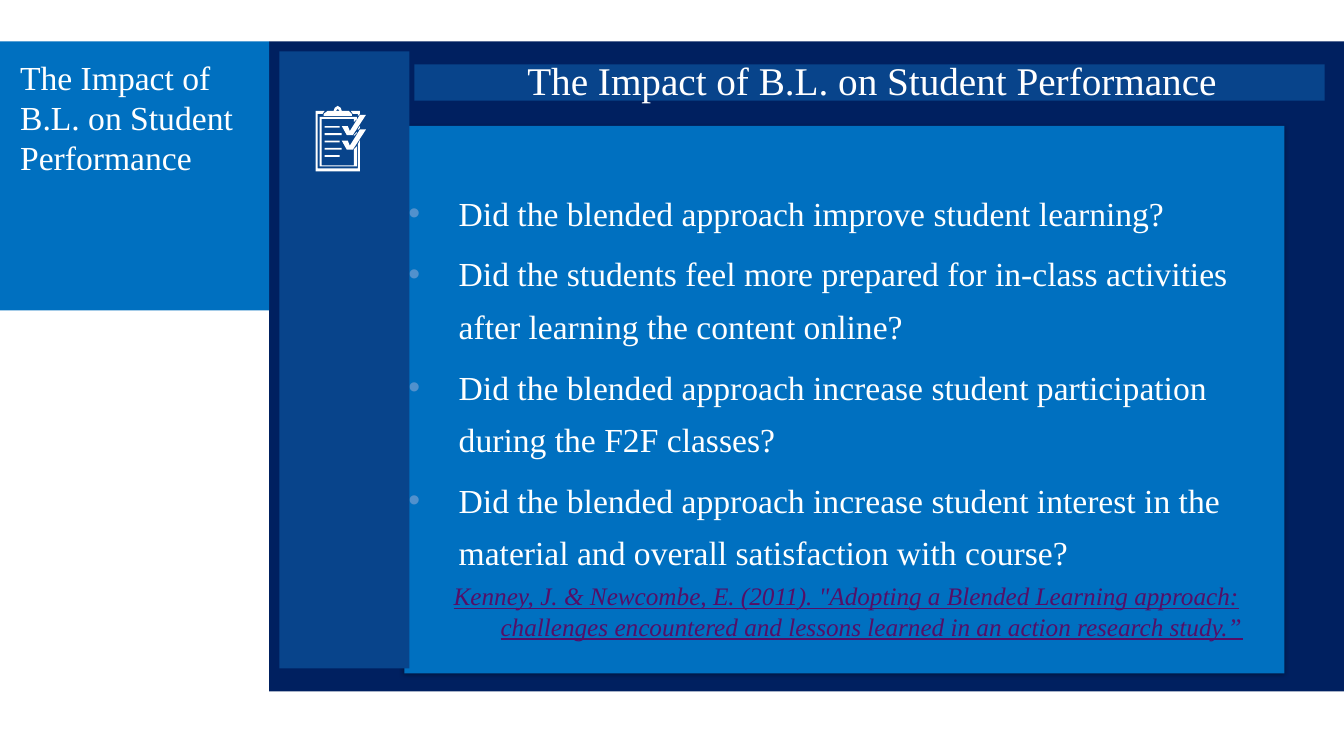
import pptx
import pptx.dml.color
import pptx.enum.shapes
import pptx.enum.text
import pptx.oxml
import pptx.oxml.ns
import pptx.util

Inches = pptx.util.Inches
Pt = pptx.util.Pt
RGB = pptx.dml.color.RGBColor
ALIGN = pptx.enum.text.PP_ALIGN
ANCHOR = pptx.enum.text.MSO_ANCHOR

NAVY = RGB(0x00, 0x20, 0x60)
BLUE = RGB(0x00, 0x70, 0xC0)
STEEL = RGB(0x08, 0x44, 0x8B)
WHITE = RGB(0xFF, 0xFF, 0xFF)
PLUM = RGB(0x54, 0x0F, 0x67)
DOT = RGB(0x51, 0x91, 0xCD)
FONT = "Times New Roman"
NS = pptx.oxml.ns.nsdecls("a")

TITLE = "The Impact of B.L. on Student Performance"
ASKS = [
    "Did the blended approach improve student learning?",
    "Did the students feel more prepared for in-class activities after learning the content online?",
    "Did the blended approach increase student participation during the F2F classes?",
    "Did the blended approach increase student interest in the material and overall satisfaction with course?",
]
CITE = ('Kenney, J. & Newcombe, E. (2011). "Adopting a Blended Learning approach: '
        "challenges encountered and lessons learned in an action research study.”")

BOARD = [
    [(42, 62), (2, 62), (2, 8), (7, 8), (9, 5), (0, 5), (0, 65), (44, 65), (44, 34), (42, 38)],
    [(38, 59), (6, 59), (6, 13), (38, 13), (38, 16), (41, 13), (41, 11), (4, 11), (4, 60),
     (41, 60), (41, 40), (38, 43)],
    [(44, 8), (44, 5), (35, 5), (37, 8), (42, 8), (42, 10)],
    [(42, 24), (44, 22), (44, 20), (42, 23)],
    [(41, 26), (38, 29), (38, 30), (41, 27)],
    [(8, 8), (12, 5), (18, 5), (19, 2), (22, 0), (25, 2), (26, 5), (33, 5), (36, 8), (36, 10), (8, 10)],
    [(20, 5), (24, 5), (22, 3)],
]
TICK = [(50, 9), (37, 29), (31, 29), (26, 20), (32, 20), (34, 25), (44, 9)]


def paint(shape, fill):
    """Give a shape a plain fill with no line or shadow."""
    shape.shadow.inherit = False
    shape.fill.solid()
    shape.fill.fore_color.rgb = fill
    shape.line.fill.background()


def panel(slide, box, fill):
    """Draw a plain rectangle in the box."""
    kind = pptx.enum.shapes.MSO_SHAPE.RECTANGLE
    shape = slide.shapes.add_shape(kind, *map(Inches, box))
    paint(shape, fill)
    return shape


def frame(shape, pads, anchor):
    """Set the margins and anchor of a shape's text."""
    text = shape.text_frame
    text.word_wrap = True
    text.vertical_anchor = anchor
    text.margin_left, text.margin_top, text.margin_right, text.margin_bottom = map(Inches, pads)
    return text


def write(para, words, size, color=WHITE, align=ALIGN.LEFT):
    """Add one run to a paragraph and return its font."""
    para.alignment = align
    run = para.add_run()
    run.text = words
    font = run.font
    font.name, font.size, font.color.rgb = FONT, Pt(size), color
    return font


def label(slide, box, fill, size, pads, anchor, align):
    """Draw a filled box that holds the title."""
    text = frame(panel(slide, box, fill), pads, anchor)
    write(text.paragraphs[0], TITLE, size, align=align)


def hang(para, mark):
    """Indent a paragraph by half an inch, with or without a bullet."""
    props = para._p.get_or_add_pPr()
    props.set("marL", str(Inches(0.5)))
    props.set("indent", str(Inches(-0.5)))
    if mark:
        for part in (f'<a:buClr {NS}><a:srgbClr val="{DOT}"/></a:buClr>',
                     f'<a:buFont {NS} typeface="Arial"/>',
                     f'<a:buChar {NS} char="•"/>'):
            props.append(pptx.oxml.parse_xml(part))


def shade(shape):
    """Cast a soft shadow below a shape."""
    props = shape._element.spPr
    props.remove(props.find(pptx.oxml.ns.qn("a:effectLst")))
    props.append(pptx.oxml.parse_xml(
        f'<a:effectLst {NS}><a:outerShdw blurRad="{Pt(3.1)}" dist="{Pt(1.6)}" dir="5400000" '
        'rotWithShape="0"><a:srgbClr val="000000"><a:alpha val="38000"/></a:srgbClr>'
        "</a:outerShdw></a:effectLst>"))


def body(slide, box):
    """Draw the panel with the questions and the citation."""
    shape = panel(slide, box, BLUE)
    shade(shape)
    text = frame(shape, (0.04, 0.54, 0, 0), ANCHOR.TOP)
    for i, ask in enumerate(ASKS):
        para = text.add_paragraph() if i else text.paragraphs[0]
        hang(para, True)
        para.line_spacing = 1.3
        para.space_before = Pt(6 if i else 0)
        write(para, ask, 24)
    para = text.add_paragraph()
    hang(para, False)
    para.space_before = Pt(6)
    font = write(para, CITE, 18, PLUM, ALIGN.CENTER)
    font.italic = font.underline = True


def icon(slide, left, top):
    """Draw a clipboard with five lines and two ticks."""
    rows = [(20 + 7.25 * i, 17 if i % 2 else 15) for i in range(5)]
    bars = [[(9, y), (9 + w, y), (9 + w, y + 1.7), (9, y + 1.7)] for y, w in rows]
    ticks = [[(x, y + drop) for x, y in TICK] for drop in (0, 14.5)]
    loops = [[(10 * x, 10 * y) for x, y in loop] for loop in BOARD + bars + ticks]
    pen = slide.shapes.build_freeform(*loops[0][0], scale=Inches(1) / 1000)
    for i, loop in enumerate(loops):
        if i:
            pen.move_to(*loop[0])
        pen.add_line_segments(loop[1:], close=True)
    paint(pen.convert_to_shape(Inches(left), Inches(top)), WHITE)


def main():
    """Build the slide and save it."""
    deck = pptx.Presentation()
    deck.slide_width, deck.slide_height = Inches(13.33), Inches(7.5)
    slide = deck.slides.add_slide(deck.slide_layouts[6])
    panel(slide, (2.67, 0.41, 10.67, 6.45), NAVY)
    label(slide, (0, 0.41, 2.67, 2.67), BLUE, 24, (0.2, 0.15, 0.1, 0.05), ANCHOR.TOP, ALIGN.LEFT)
    body(slide, (4.01, 1.25, 8.73, 5.43))
    panel(slide, (2.77, 0.51, 1.29, 6.12), STEEL)
    label(slide, (4.11, 0.64, 9.03, 0.36), STEEL, 28, (0.1, 0.05, 0.05, 0.1), ANCHOR.MIDDLE, ALIGN.CENTER)
    icon(slide, 3.13, 1.05)
    deck.save("out.pptx")


if __name__ == "__main__":
    main()
